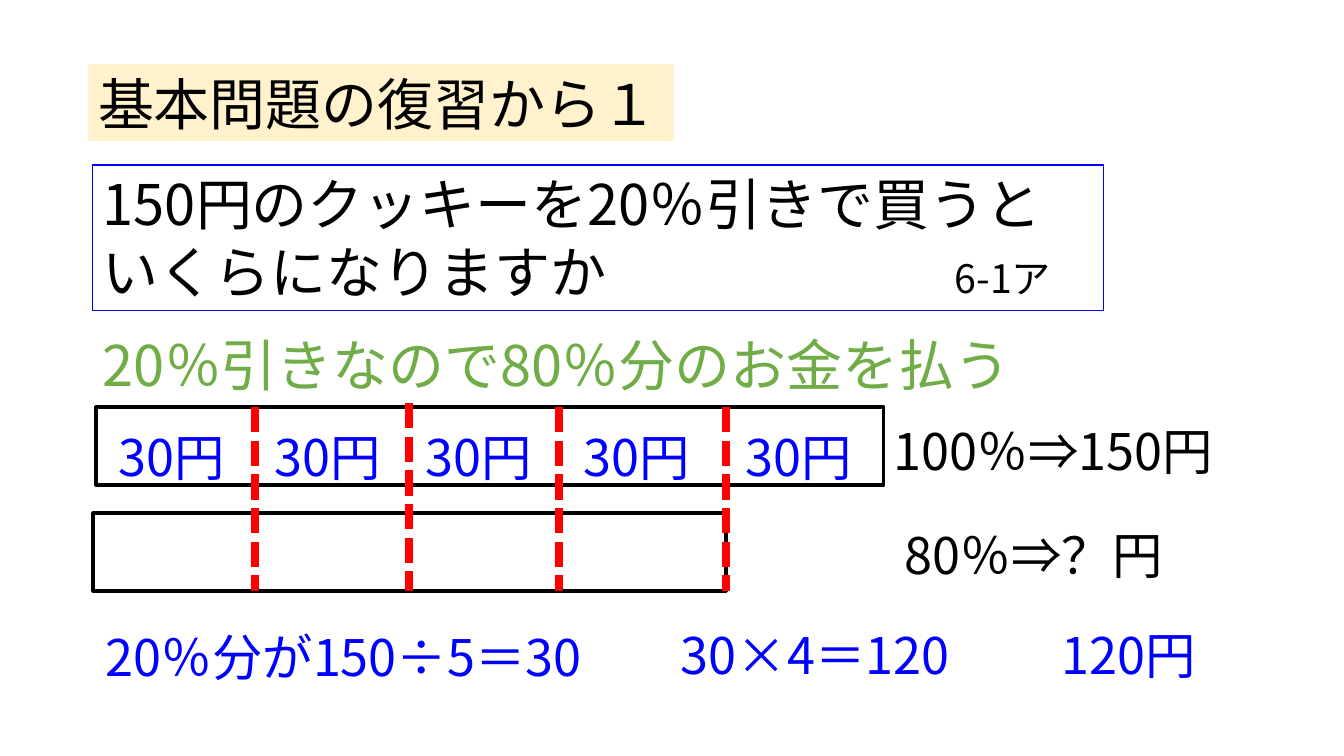
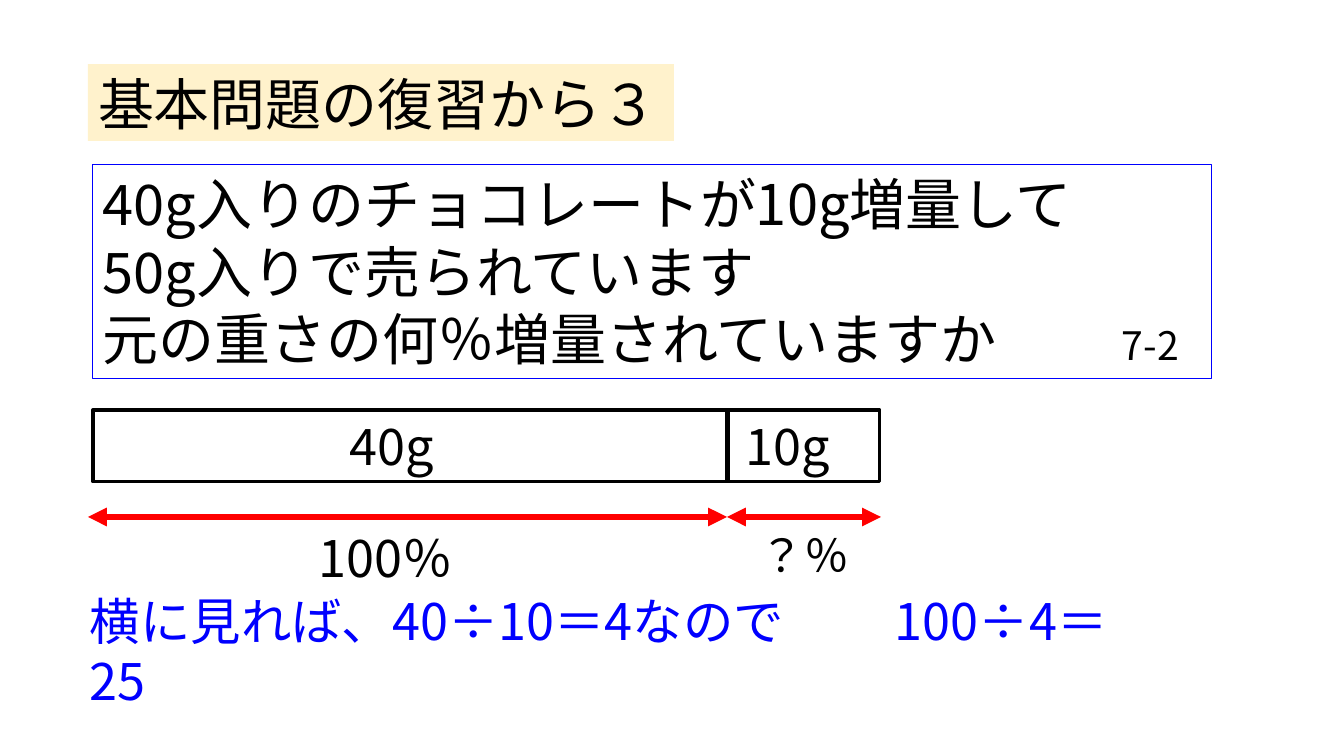
from lxml import etree
from pptx import Presentation
from pptx.dml.color import RGBColor
from pptx.enum.dml import MSO_LINE
from pptx.enum.shapes import MSO_CONNECTOR, MSO_SHAPE
from pptx.enum.text import MSO_ANCHOR, MSO_AUTO_SIZE, PP_ALIGN
from pptx.oxml.ns import qn
from pptx.util import Pt

W, H = 1344, 756
PX = 12192000 / W
FONT = "Noto Sans CJK JP"
COLORS = {"black": "000000", "blue": "0000FF", "green": "70AD47",
          "red": "FF0000", "cream": "FFF2CC"}
RGB = {name: RGBColor.from_string(value) for name, value in COLORS.items()}
FRAME = {"vertical_anchor": MSO_ANCHOR.TOP, "auto_size": MSO_AUTO_SIZE.NONE}
TITLE_BOX = (88, 64, 586, 77)
DASH_X = (255, 409, 559, 726)
SHARE_X = (109, 265, 416, 574, 736)


def emu(*lengths):
    return [round(n * PX) for n in lengths]


def write(sp, text, size, color="black", wrap=True, tab=0, tab_size=None):
    """Fill a shape with left-aligned lines; text after a tab may have its own size."""
    tf = sp.text_frame
    tf.word_wrap = wrap
    for name, value in FRAME.items():
        setattr(tf, name, value)
    for i, line in enumerate(text.split("\n")):
        p = tf.add_paragraph() if i else tf.paragraphs[0]
        p.alignment = PP_ALIGN.LEFT
        before, mark, after = line.partition("\t")
        if mark:
            tabs = etree.SubElement(p._p.get_or_add_pPr(), qn("a:tabLst"))
            etree.SubElement(tabs, qn("a:tab"), pos=str(emu(tab)[0]), algn="l")
        for part, part_size in ((before, size), (mark + after, tab_size or size)):
            if not part:
                continue
            r = p.add_run()
            r.text = part
            r.font.name, r.font.size = FONT, Pt(part_size)
            r.font.color.rgb = RGB[color]
            etree.SubElement(r._r.get_or_add_rPr(), qn("a:ea"), typeface=FONT)


# Bars and frames: box, outline colour, outline width
# Texts: box, wording, format
# Lines: start x, start y, end x, end y
slides = [
    {
        "title": "基本問題の復習から１",
        "question": ((93, 165, 1011, 146),
                     "150円のクッキーを20％引きで買うと\nいくらになりますか\t6-1ア", 852),
        "bars": [(96, 407, 788, 78), (93, 513, 633, 78)],
        "dashes": [(x, 403 if x == 409 else 407, x, 591) for x in DASH_X],
        "arrows": [],
        "texts": [
            ((93, 326, 992, 78), "20％引きなので80％分のお金を払う",
             {"size": 40, "color": "green"}),
            ((884, 415, 399, 72), "100％⇒150円", {}),
            ((895, 519, 312, 72), "80％⇒？円", {}),
            *[((x, 421, 157, 72), "30円", {"color": "blue"}) for x in SHARE_X],
            ((96, 621, 577, 72), "20％分が150÷5＝30", {"color": "blue"}),
            ((671, 619, 578, 72), "30×4＝120\t120円", {"color": "blue", "tab": 381}),
        ],
    },
    {
        "title": "基本問題の復習から３",
        "question": ((93, 165, 1119, 214),
                     "40g入りのチョコレートが10g増量して\n50g入りで売られています\n"
                     "元の重さの何％増量されていますか\t7-2", 1019),
        "bars": [(93, 410, 635, 72), (727, 410, 153, 72)],
        "dashes": [],
        "arrows": [(88, 517, 727, 517), (727, 517, 881, 517)],
        "texts": [
            ((340, 410, 136, 72), "40g", {}),
            ((736, 410, 136, 72), "10g", {}),
            ((309, 522, 179, 72), "100％", {}),
            ((750, 523, 122, 65), "？％", {"size": 32}),
            ((80, 585, 1161, 132), "横に見れば、40÷10＝4なので\t100÷4＝\n25",
             {"color": "blue", "tab": 805}),
        ],
    },
]

prs = Presentation()
prs.slide_width, prs.slide_height = emu(W, H)

for content in slides:
    s = prs.slides.add_slide(prs.slide_layouts[5])

    title = s.shapes.title
    title.left, title.top, title.width, title.height = emu(*TITLE_BOX)
    title.fill.solid()
    title.fill.fore_color.rgb = RGB["cream"]
    write(title, content["title"], 40, wrap=False)

    question_box, question, tab = content["question"]
    outlines = [(question_box, "blue", 0.75)]
    outlines += [(bar, "black", 2.25) for bar in content["bars"]]
    for box, color, width in outlines:
        sp = s.shapes.add_shape(MSO_SHAPE.RECTANGLE, *emu(*box))
        sp.shadow.inherit = False
        sp.fill.background()
        sp.line.color.rgb = RGB[color]
        sp.line.width = Pt(width)
        if box == question_box:
            write(sp, question, 40, tab=tab, tab_size=28)

    for kind, width in (("dashes", 6), ("arrows", 4.5)):
        for ends in content[kind]:
            line = s.shapes.add_connector(MSO_CONNECTOR.STRAIGHT, *emu(*ends))
            line.line.color.rgb = RGB["red"]
            line.line.width = Pt(width)
            if kind == "dashes":
                line.line.dash_style = MSO_LINE.SQUARE_DOT
            else:
                ln = line.line._get_or_add_ln()
                for end in ("a:headEnd", "a:tailEnd"):
                    etree.SubElement(ln, qn(end), type="triangle")
            etree.SubElement(line._element.spPr, qn("a:effectLst"))

    for box, text, style in content["texts"]:
        write(s.shapes.add_textbox(*emu(*box)), text, **{"size": 36, **style})

prs.save("out.pptx")
